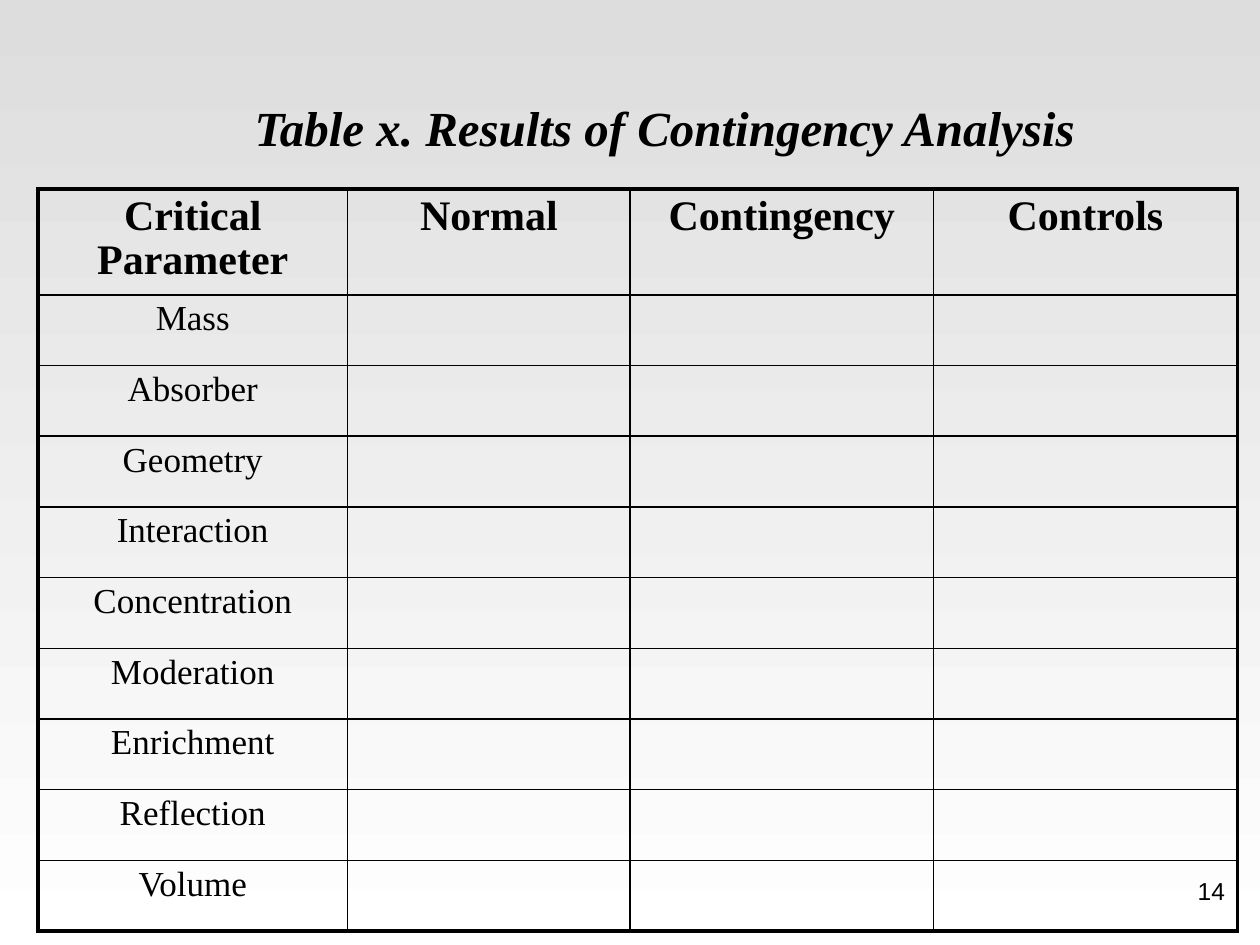
"""Build the contingency analysis table slide."""
from dataclasses import dataclass

from lxml import etree
from pptx import Presentation
from pptx import util as u
from pptx.dml.color import RGBColor
from pptx.enum import text
from pptx.oxml import ns

SERIF, SANS, BLACK = "Times New Roman", "Arial", "000000"
HEADERS = ["Critical Parameter", "Normal", "Contingency", "Controls"]
PARAMETERS = ["Mass", "Absorber", "Geometry", "Interaction", "Concentration",
              "Moderation", "Enrichment", "Reflection", "Volume"]
COL_WIDTHS = [177.12, 161.28, 173.52, 173.52]
HEADER_HEIGHT, ROW_HEIGHT = 60.5, 40.4
OUTER, INNER = 2.25, 1


@dataclass
class Style:
    size: float
    name: str = SERIF
    bold: bool = False
    italic: bool = False
    align: text.PP_ALIGN = text.PP_ALIGN.CENTER


def color(value: str) -> RGBColor:
    return RGBColor.from_string(value)


def write(tf, content: str, style: Style) -> None:
    tf.text = content
    p = tf.paragraphs[0]
    p.alignment = style.align
    for r in p.runs:
        r.font.size = u.Pt(style.size)
        r.font.name = style.name
        r.font.bold, r.font.italic = style.bold, style.italic
        r.font.color.rgb = color(BLACK)


def set_borders(cell, widths: dict[str, float]) -> None:
    tc_pr = cell._tc.get_or_add_tcPr()
    for i, (side, width) in enumerate(widths.items()):
        ln = etree.Element(ns.qn(f"a:ln{side}"), w=str(u.Pt(width)))
        fill = etree.SubElement(ln, ns.qn("a:solidFill"))
        etree.SubElement(fill, ns.qn("a:srgbClr"), val=BLACK)
        tc_pr.insert(i, ln)


def add_grid(s, rows: list[list[str]], left: float, top: float) -> None:
    heights = [HEADER_HEIGHT] + [ROW_HEIGHT] * (len(rows) - 1)
    frame = s.shapes.add_table(len(rows), len(COL_WIDTHS), u.Pt(left), u.Pt(top),
                               u.Pt(sum(COL_WIDTHS)), u.Pt(sum(heights)))
    table = frame.table
    table.first_row = table.horz_banding = False
    for column, width in zip(table.columns, COL_WIDTHS):
        column.width = u.Pt(width)
    last_row, last_col = len(rows) - 1, len(COL_WIDTHS) - 1
    for i, values in enumerate(rows):
        table.rows[i].height = u.Pt(heights[i])
        style = Style(20) if i else Style(24, bold=True)
        for j, value in enumerate(values):
            cell = table.cell(i, j)
            cell.fill.background()
            set_borders(cell, {"L": INNER if j else OUTER,
                               "R": OUTER if j == last_col else INNER,
                               "T": INNER if i else OUTER,
                               "B": OUTER if i == last_row else INNER})
            if value:
                write(cell.text_frame, value, style)
                cell.text_frame.paragraphs[0].line_spacing = 0.95


def main() -> None:
    prs = Presentation()
    prs.slide_width, prs.slide_height = u.Pt(720), u.Pt(540)
    s = prs.slides.add_slide(prs.slide_layouts[5])

    fill = s.background.fill
    fill.gradient()
    fill.gradient_angle = 270
    for stop, value in zip(fill.gradient_stops, ["DDDDDD", "FFFFFF"]):
        stop.color.rgb = color(value)

    title = s.shapes.title
    title.left, title.top = u.Pt(138.24), u.Pt(27.36)
    title.width, title.height = u.Pt(563.76), u.Pt(90)
    title.text_frame.vertical_anchor = text.MSO_ANCHOR.MIDDLE
    write(title.text_frame, "Table x. Results of Contingency Analysis",
          Style(28, bold=True, italic=True, align=text.PP_ALIGN.LEFT))

    blanks = [""] * (len(HEADERS) - 1)
    add_grid(s, [HEADERS] + [[name] + blanks for name in PARAMETERS], 21.6, 108)

    number = s.shapes.add_textbox(u.Pt(557.28), u.Pt(491.04), u.Pt(149.76), u.Pt(36))
    tf = number.text_frame
    tf.word_wrap = True
    tf.vertical_anchor = text.MSO_ANCHOR.MIDDLE
    write(tf, "14", Style(14, SANS, align=text.PP_ALIGN.RIGHT))

    prs.save("out.pptx")


if __name__ == "__main__":
    main()
